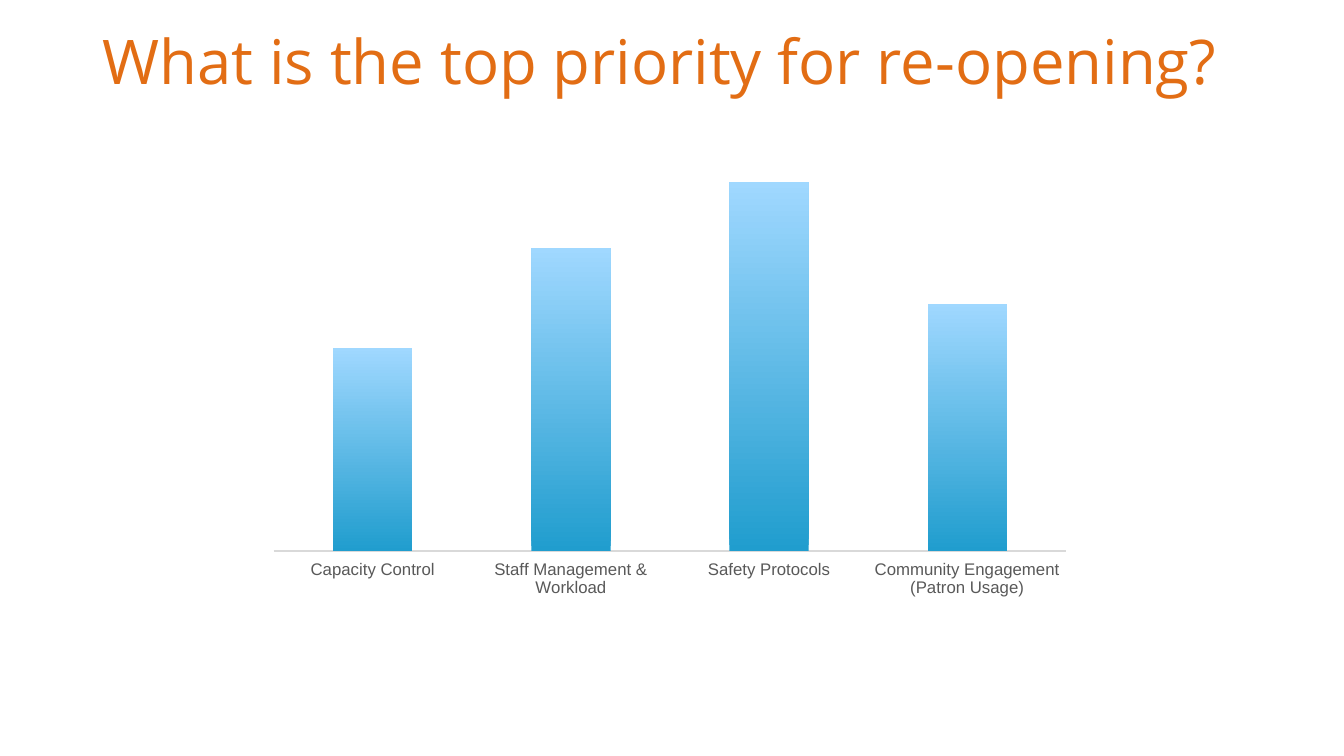
from lxml.etree import SubElement as Sub
from pptx import Presentation
from pptx.chart.data import CategoryChartData as Data
from pptx.dml.color import RGBColor
from pptx.enum.chart import XL_CHART_TYPE as Kind, XL_TICK_LABEL_POSITION as Spot, XL_TICK_MARK as Tick
from pptx.enum.text import MSO_ANCHOR as Anchor, PP_ALIGN as Align
from pptx.oxml.ns import qn
from pptx.util import Inches, Pt

ORANGE = RGBColor(0xE2, 0x6D, 0x14)
DEEP = RGBColor(0x20, 0x9D, 0xCE)
PALE = RGBColor(0xA0, 0xD8, 0xFF)
GREY = RGBColor(0x59, 0x59, 0x59)
RULE = RGBColor(0xD9, 0xD9, 0xD9)
BLACK = RGBColor(0, 0, 0)

deck = Presentation()
deck.slide_width, deck.slide_height = Inches(13.33), Inches(7.5)
slide = deck.slides.add_slide(deck.slide_layouts[6])

title = slide.shapes.add_textbox(Inches(0.34), Inches(0.13), Inches(12.42), Inches(1.03))
frame = title.text_frame
frame.word_wrap = True
frame.vertical_anchor = Anchor.MIDDLE
frame.margin_left = frame.margin_right = Inches(0.13)
frame.margin_top = frame.margin_bottom = Inches(0.13)
line = frame.paragraphs[0]
line.alignment = Align.CENTER
line.line_spacing = 0.9
run = line.add_run()
run.text = "What is the top priority for re-opening?"
run.font.name = "Open Sans"
run.font.size = Pt(44)
run.font.color.rgb = ORANGE

votes = {
    "Capacity Control": 55,
    "Staff Management & Workload": 82,
    "Safety Protocols": 100,
    "Community Engagement (Patron Usage)": 67,
}
data = Data()
data.categories = list(votes)
data.add_series("Series 1", list(votes.values()))
chart = slide.shapes.add_chart(
    Kind.COLUMN_STACKED, Inches(2.25), Inches(1.57), Inches(8.61), Inches(4.92), data
).chart
chart.has_title = False
chart.has_legend = False
chart.font.name = "Arial"
chart.font.size = Pt(10)
chart.font.color.rgb = BLACK

plot = chart.plots[0]
plot.gap_width = 150
plot.overlap = 100
plot.vary_by_categories = False
fill = plot.series[0].format.fill
fill.gradient()
fill.gradient_angle = 90
for stop, tone in zip(fill.gradient_stops, (DEEP, PALE)):
    stop.color.rgb = tone

cats = chart.category_axis
cats.major_tick_mark = cats.minor_tick_mark = Tick.NONE
cats.tick_label_position = Spot.LOW
cats.has_major_gridlines = False
cats.format.line.color.rgb = RULE
cats.format.line.width = Pt(1)
cats.tick_labels.font.name = "Arial"
cats.tick_labels.font.size = Pt(12)
cats.tick_labels.font.color.rgb = GREY

scale = chart.value_axis
scale.minimum_scale = 0
scale.maximum_scale = 106
scale.has_major_gridlines = False
scale.visible = False

area = chart.element.find(".//" + qn("c:plotArea"))
for old in area.findall(qn("c:layout")):
    area.remove(old)
place = Sub(area, qn("c:layout"))
area.insert(0, place)
inner = Sub(place, qn("c:manualLayout"))
rules = [("layoutTarget", "inner"), ("xMode", "edge"), ("yMode", "edge"),
         ("x", 0.054), ("y", 0.003), ("w", 0.913), ("h", 0.789)]
for name, value in rules:
    Sub(inner, qn("c:" + name)).set("val", str(value))

deck.save("out.pptx")
